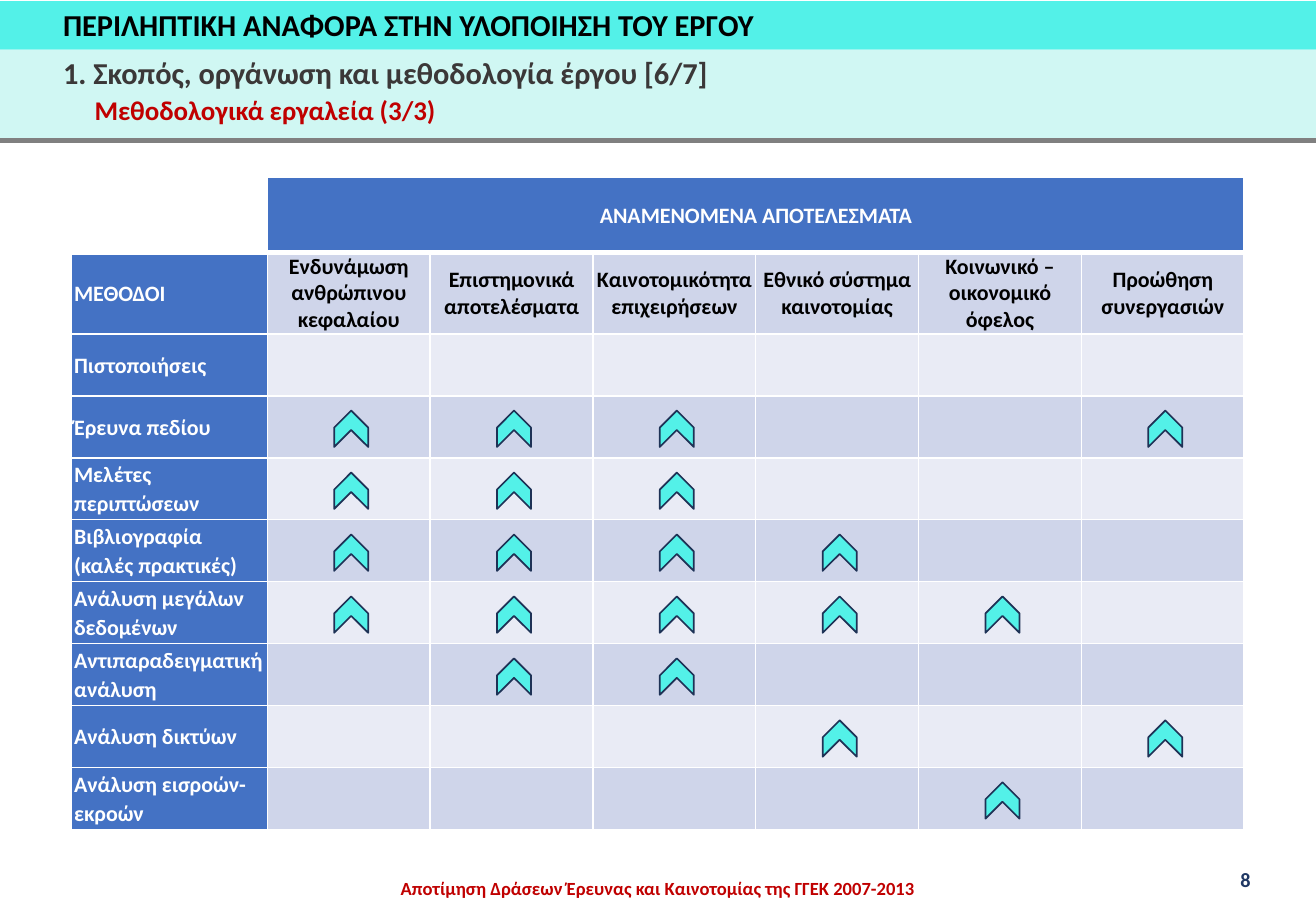
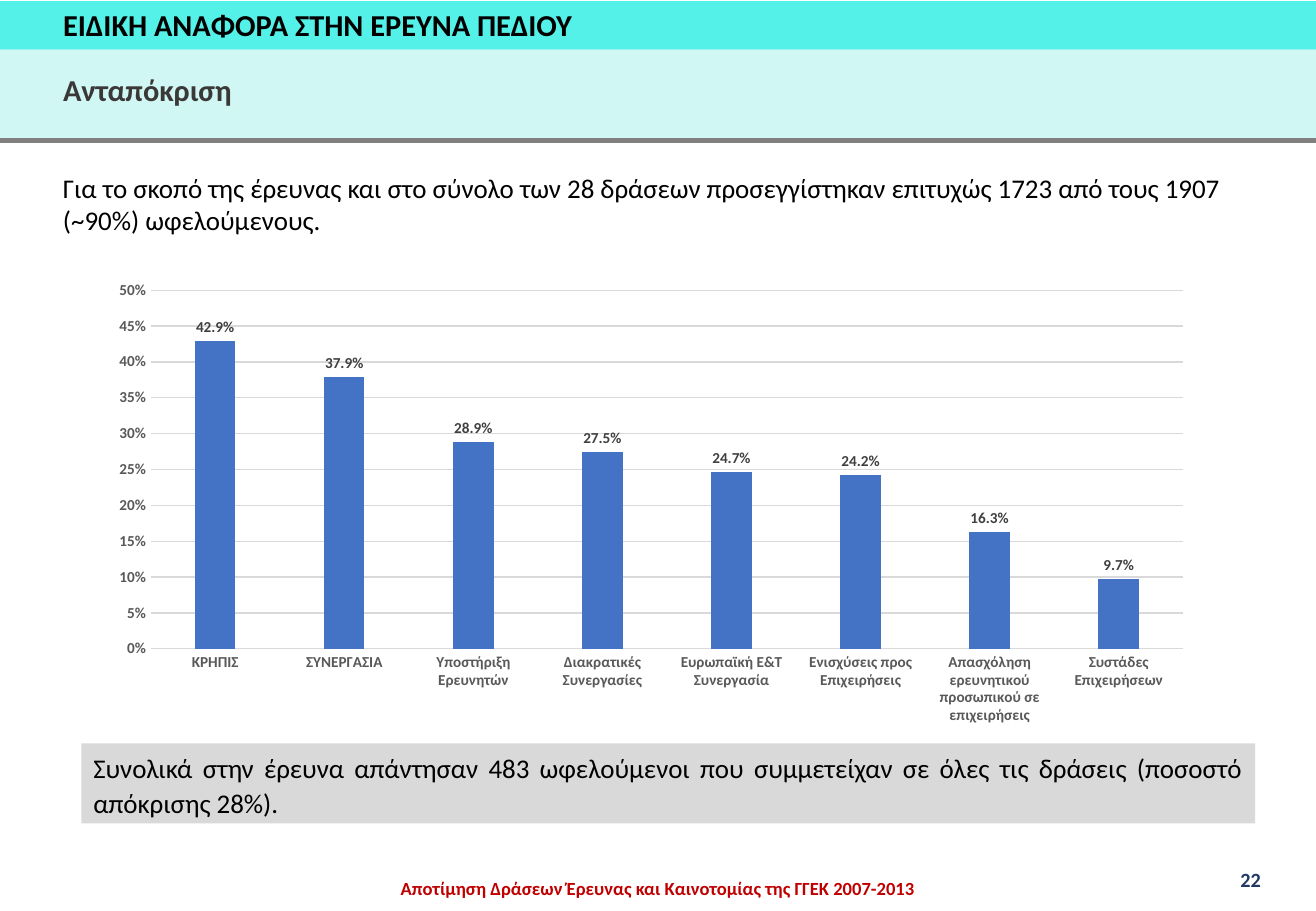
"""Build two project slides: a methods and results matrix, and a survey response chart."""
from lxml.etree import SubElement
from pptx import Presentation
from pptx.chart.data import CategoryChartData
from pptx.dml.color import RGBColor
from pptx.enum.chart import XL_CHART_TYPE, XL_LABEL_POSITION, XL_TICK_MARK
from pptx.enum.shapes import MSO_CONNECTOR, MSO_SHAPE
from pptx.enum.text import MSO_ANCHOR, PP_ALIGN
from pptx.oxml.ns import qn
from pptx.util import Inches, Pt

FONT = "Calibri"
BLACK, WHITE, GRAPHITE, RED, NAVY = "000000", "FFFFFF", "3B3838", "C00000", "203864"
AQUA, PALE_AQUA, BLUE, OUTLINE = "53F1E8", "D0F7F3", "4472C4", "1E3256"
BANDS = ["CFD5EA", "E9EBF5"]
GREY, LIGHT_GREY, AXIS_TEXT, LABEL_TEXT = "808080", "D9D9D9", "595959", "404040"
rgb = RGBColor.from_string


def write(tf, text, size=18, color=BLACK, bold=True, align=PP_ALIGN.LEFT,
          spacing=None, wrap=True, anchor=MSO_ANCHOR.TOP):
    """Fill a text frame, one paragraph per line of text."""
    tf.word_wrap = wrap
    tf.vertical_anchor = anchor
    for i, line in enumerate(text.split("\n")):
        p = tf.paragraphs[0] if i == 0 else tf.add_paragraph()
        p.alignment = align
        p.line_spacing = spacing
        r = p.add_run()
        r.text = line
        r.font.name, r.font.size, r.font.bold = FONT, Pt(size), bold
        r.font.color.rgb = rgb(color)


def add_figure(s, kind, at, fill, line=None):
    """Add a flat preset shape with an optional thin outline."""
    sp = s.shapes.add_shape(kind, *map(Inches, at))
    sp.shadow.inherit = False
    sp.fill.solid()
    sp.fill.fore_color.rgb = rgb(fill)
    if line:
        sp.line.color.rgb = rgb(line)
        sp.line.width = Pt(1)
    else:
        sp.line.fill.background()
    return sp


prs = Presentation()
prs.slide_width, prs.slide_height = Inches(10.83), Inches(7.5)

headers = [
    ("ΠΕΡΙΛΗΠΤΙΚΗ ΑΝΑΦΟΡΑ ΣΤΗΝ ΥΛΟΠΟΙΗΣΗ ΤΟΥ ΕΡΓΟΥ", 6.01, "8",
     "1. Σκοπός, οργάνωση και μεθοδολογία έργου [6/7]", (0.42, 0.4, 6.09, 0.4)),
    ("ΕΙΔΙΚΗ ΑΝΑΦΟΡΑ ΣΤΗΝ ΕΡΕΥΝΑ ΠΕΔΙΟΥ", 4.49, "22",
     "Ανταπόκριση", (0.42, 0.54, 8.11, 0.4)),
]
for title, title_width, number, heading, heading_at in headers:
    s = prs.slides.add_slide(prs.slide_layouts[6])
    footer = s.shapes.add_textbox(*map(Inches, (2.82, 7.05, 5.19, 0.38))).text_frame
    footer.margin_left = footer.margin_right = footer.margin_top = footer.margin_bottom = 0
    write(footer, "Aποτίμηση Δράσεων Έρευνας και Καινοτομίας της ΓΓΕΚ 2007-2013",
          size=11, color=RED, align=PP_ALIGN.CENTER, spacing=Pt(25.3))
    page = s.shapes.add_textbox(*map(Inches, (10.11, 7.09, 0.52, 0.3)))
    write(page.text_frame, number, size=12, color=NAVY)
    add_figure(s, MSO_SHAPE.RECTANGLE, (0, 0.01, 10.83, 0.4), AQUA)
    add_figure(s, MSO_SHAPE.RECTANGLE, (0, 0.41, 10.83, 0.75), PALE_AQUA)
    rule = s.shapes.add_connector(MSO_CONNECTOR.STRAIGHT, *map(Inches, (-0.01, 1.16, 10.83, 1.16)))
    rule.line.color.rgb = rgb(GREY)
    rule.line.width = Pt(3)
    SubElement(rule.element.spPr, qn("a:effectLst"))
    title_box = s.shapes.add_textbox(*map(Inches, (0.42, 0, title_width, 0.4)))
    write(title_box.text_frame, title, wrap=False)
    heading_box = s.shapes.add_textbox(*map(Inches, heading_at))
    write(heading_box.text_frame, heading, color=GRAPHITE)

s = prs.slides[0]
subtitle = s.shapes.add_textbox(*map(Inches, (0.68, 0.72, 3.05, 0.37)))
write(subtitle.text_frame, "Μεθοδολογικά εργαλεία (3/3)", size=16, color=RED, wrap=False)

results = [
    "Ενδυνάμωση ανθρώπινου κεφαλαίου", "Επιστημονικά αποτελέσματα",
    "Καινοτομικότητα επιχειρήσεων", "Εθνικό σύστημα καινοτομίας",
    "Κοινωνικό – οικονομικό όφελος", "Προώθηση συνεργασιών",
]
methods = [
    ("Πιστοποιήσεις", []),
    ("Έρευνα πεδίου", [0, 1, 2, 5]),
    ("Μελέτες περιπτώσεων", [0, 1, 2]),
    ("Βιβλιογραφία\n(καλές πρακτικές)", [0, 1, 2, 3]),
    ("Ανάλυση μεγάλων δεδομένων", [0, 1, 2, 3, 4]),
    ("Αντιπαραδειγματική ανάλυση", [1, 2]),
    ("Ανάλυση δικτύων", [3, 5]),
    ("Ανάλυση εισροών-εκροών", [4]),
]
rows = [["", "ΑΝΑΜΕΝΟΜΕΝΑ ΑΠΟΤΕΛΕΣΜΑΤΑ"] + [""] * 5, ["ΜΕΘΟΔΟΙ"] + results]
rows += [[method] + [""] * 6 for method, _ in methods]
widths = [1.61] + [1.34] * 6
heights = [0.62, 0.67] + [0.51] * 8

table = s.shapes.add_table(len(rows), len(widths), *map(Inches, (0.59, 1.46, 9.65, 5.37))).table
table.first_row = table.horz_banding = False
for column, width in zip(table.columns, widths):
    column.width = Inches(width)
for row, height in zip(table.rows, heights):
    row.height = Inches(height)
table.cell(0, 1).merge(table.cell(0, 6))

for i, row in enumerate(rows):
    for j, text in enumerate(row):
        cell = table.cell(i, j)
        tcPr = cell._tc.get_or_add_tcPr()
        for side in ("L", "R", "T", "B"):
            points = 3 if i == 0 and side == "B" else 1
            ln = SubElement(tcPr, qn(f"a:ln{side}"), w=str(Pt(points)))
            SubElement(SubElement(ln, qn("a:solidFill")), qn("a:srgbClr"), val=WHITE)
        is_header = i == 0 or j == 0
        if i == j == 0:
            cell.fill.background()
        else:
            cell.fill.solid()
            cell.fill.fore_color.rgb = rgb(BLUE if is_header else BANDS[(i - 1) % 2])
        cell.margin_left = cell.margin_right = Inches(0.02)
        cell.margin_top = cell.margin_bottom = 0
        cell.vertical_anchor = MSO_ANCHOR.MIDDLE
        if text:
            write(cell.text_frame, text, size=13, color=WHITE if is_header else BLACK,
                  align=PP_ALIGN.LEFT if j == 0 else PP_ALIGN.CENTER,
                  spacing=1.07 if is_header else None, anchor=MSO_ANCHOR.MIDDLE)

for i, (_, marks) in enumerate(methods):
    for j in marks:
        at = (2.74 + 1.34 * j, 2.88 + 0.51 * i, 0.3, 0.28)
        chevron = add_figure(s, MSO_SHAPE.CHEVRON, at, AQUA, OUTLINE)
        chevron.rotation = 270

s = prs.slides[1]
intro = s.shapes.add_textbox(*map(Inches, (0.42, 1.36, 10.1, 0.64)))
write(intro.text_frame,
      "Για το σκοπό της έρευνας και στο σύνολο των 28 δράσεων προσεγγίστηκαν επιτυχώς "
      "1723 από τους 1907 (~90%) ωφελούμενους.", size=16, bold=False)

responses = {
    "ΚΡΗΠΙΣ": 0.429,
    "ΣΥΝΕΡΓΑΣΙΑ": 0.379,
    "Υποστήριξη Ερευνητών": 0.289,
    "Διακρατικές Συνεργασίες": 0.275,
    "Ευρωπαϊκή Ε&Τ Συνεργασία": 0.247,
    "Ενισχύσεις προς Επιχειρήσεις": 0.242,
    "Απασχόληση ερευνητικού προσωπικού σε επιχειρήσεις": 0.163,
    "Συστάδες Επιχειρήσεων": 0.097,
}
data = CategoryChartData(number_format="0.0%")
data.categories = list(responses)
data.add_series("Ανταπόκριση", list(responses.values()))
chart = s.shapes.add_chart(XL_CHART_TYPE.COLUMN_CLUSTERED,
                           *map(Inches, (0.8, 2.24, 9.12, 3.8)), data).chart
chart.has_legend = chart.has_title = False
chart.font.name, chart.font.size = FONT, Pt(10)

plot = chart.plots[0]
plot.gap_width, plot.overlap, plot.vary_by_categories = 219, -27, False
fill = plot.series[0].format.fill
fill.solid()
fill.fore_color.rgb = rgb(BLUE)
plot.has_data_labels = True
labels = plot.data_labels
labels.show_value = True
labels.number_format, labels.number_format_is_linked = "0.0%", False
labels.position = XL_LABEL_POSITION.OUTSIDE_END

categories, values = chart.category_axis, chart.value_axis
values.minimum_scale, values.maximum_scale, values.major_unit = 0, 0.5, 0.05
values.tick_labels.number_format = "0%"
values.tick_labels.number_format_is_linked = False
values.has_major_gridlines = True
values.format.line.fill.background()
for line in (categories.format.line, values.major_gridlines.format.line):
    line.color.rgb = rgb(LIGHT_GREY)
    line.width = Pt(0.75)
for axis in (categories, values):
    axis.major_tick_mark = axis.minor_tick_mark = XL_TICK_MARK.NONE
for font, color in ((labels.font, LABEL_TEXT), (categories.tick_labels.font, AXIS_TEXT),
                    (values.tick_labels.font, AXIS_TEXT)):
    font.name, font.size, font.bold = FONT, Pt(9), True
    font.color.rgb = rgb(color)

summary = add_figure(s, MSO_SHAPE.RECTANGLE, (0.67, 6.12, 9.66, 0.66), LIGHT_GREY)
write(summary.text_frame,
      "Συνολικά στην έρευνα απάντησαν 483 ωφελούμενοι που συμμετείχαν σε όλες τις δράσεις "
      "(ποσοστό απόκρισης 28%).", size=16, bold=False, align=PP_ALIGN.JUSTIFY, spacing=1.07)

prs.save("out.pptx")
